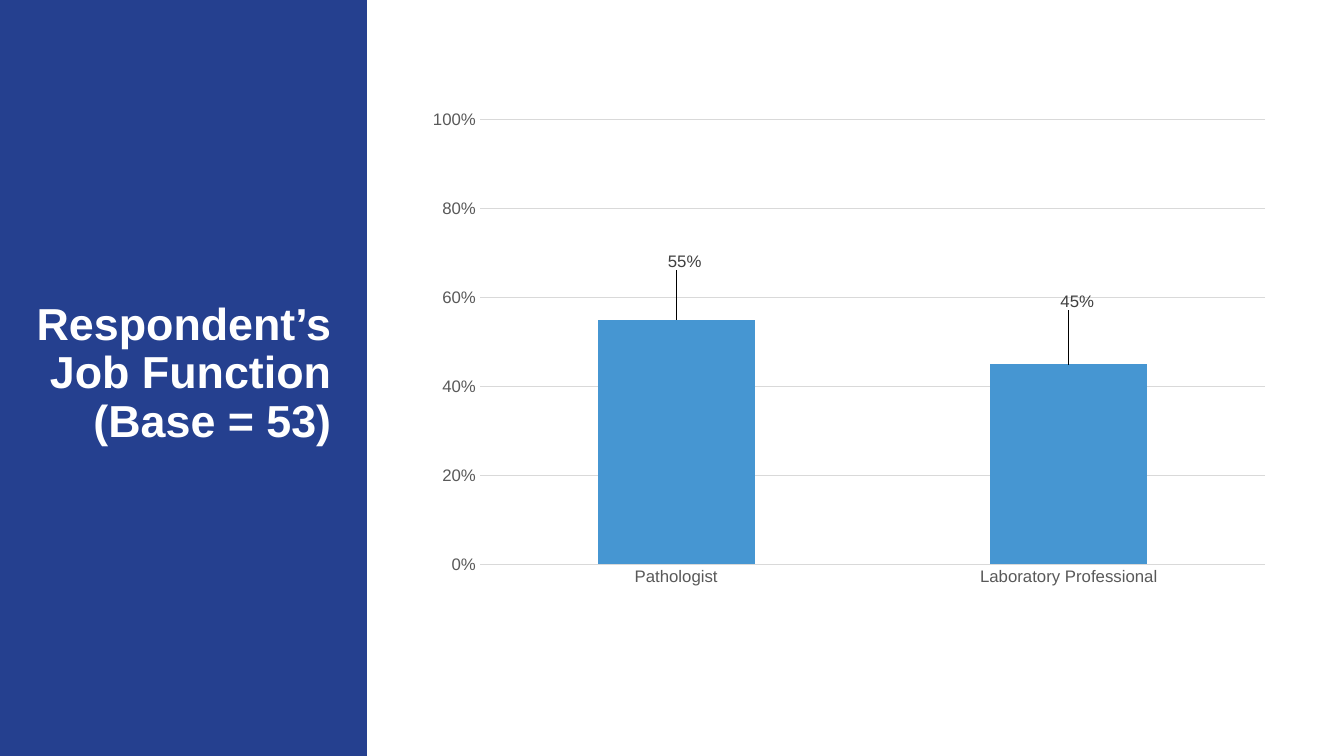
from lxml import etree
from pptx import Presentation
from pptx.chart.data import CategoryChartData
from pptx.dml.color import RGBColor
from pptx.enum.chart import XL_CHART_TYPE as ChartType, XL_LABEL_POSITION as LabelPos, XL_TICK_MARK as Tick
from pptx.enum.shapes import MSO_SHAPE as Shape
from pptx.enum.text import MSO_ANCHOR as Anchor, PP_ALIGN as Align
from pptx.oxml.ns import qn
from pptx.util import Pt

TITLE = ["Respondent’s Job Function", "(Base = 53)"]
JOBS = {"Pathologist": 0.55, "Laboratory Professional": 0.45}
LABEL_SHIFTS = [(0.01, -0.09), (0.01, -0.1)]
PLOT_AREA = {"x": 0.08, "y": 0.01, "w": 0.92, "h": 0.89}
COLORS = {"panel": "25408F", "title": "FFFFFF", "bar": "4696D2",
          "axis": "595959", "label": "404040", "grid": "D9D9D9"}
FONT = "Arial"
SLIDE_W, SLIDE_H = 960, 540
PANEL_W = 262


def rgb(name):
    return RGBColor.from_string(COLORS[name])


def style_font(font, size, color, bold=False):
    font.name, font.size, font.bold = FONT, Pt(size), bold
    font.color.rgb = rgb(color)


def manual_layout(sizes, inner=False):
    layout = etree.Element(qn("c:layout"))
    manual = etree.SubElement(layout, qn("c:manualLayout"))
    settings = {}
    if inner:
        settings = {"layoutTarget": "inner", "xMode": "edge", "yMode": "edge"}
    for tag, val in {**settings, **sizes}.items():
        etree.SubElement(manual, qn("c:" + tag)).set("val", str(val))
    return layout


def add_panel(slide):
    sp = slide.shapes.add_shape(Shape.RECTANGLE, 0, 0, Pt(PANEL_W), Pt(SLIDE_H))
    sp.shadow.inherit = False
    sp.fill.solid()
    sp.fill.fore_color.rgb = rgb("panel")
    sp.line.fill.background()
    slide.shapes._spTree.insert(2, sp._element)


def add_title(slide):
    sp = slide.shapes.title
    sp.left, sp.top, sp.width, sp.height = Pt(18), Pt(215.5), Pt(226), Pt(104)
    tf = sp.text_frame
    tf.text = "\n".join(TITLE)
    tf.word_wrap = True
    tf.vertical_anchor = Anchor.MIDDLE
    for p in tf.paragraphs:
        p.alignment, p.line_spacing = Align.RIGHT, 0.9
        for r in p.runs:
            style_font(r.font, 32, "title", True)


def style_axis(axis):
    axis.major_tick_mark = axis.minor_tick_mark = Tick.NONE
    axis.format.line.fill.background()
    style_font(axis.tick_labels.font, 12, "axis")


def add_job_chart(slide):
    data = CategoryChartData(number_format="0%")
    data.categories = list(JOBS)
    data.add_series("Series 1", list(JOBS.values()))
    chart = slide.shapes.add_chart(ChartType.COLUMN_CLUSTERED, Pt(294), Pt(79),
                                   Pt(610), Pt(360), data).chart
    chart.has_legend = chart.has_title = False
    chart.font.name, chart.font.size = FONT, Pt(10)

    style_axis(chart.category_axis)
    axis = chart.value_axis
    style_axis(axis)
    axis.minimum_scale, axis.maximum_scale, axis.major_unit = 0, 1, 0.2
    axis.tick_labels.number_format = "0%"
    axis.tick_labels.number_format_is_linked = False
    grid = axis.major_gridlines.format.line
    grid.color.rgb, grid.width = rgb("grid"), Pt(0.75)

    plot = chart.plots[0]
    plot.gap_width, plot.vary_by_categories = 150, False
    series = plot.series[0]
    series.format.fill.solid()
    series.format.fill.fore_color.rgb = rgb("bar")
    labels = series.data_labels
    labels.show_value = True
    labels.number_format, labels.number_format_is_linked = "0%", False
    style_font(labels.font, 12, "label")
    for i in range(len(JOBS)):
        label = series.points[i].data_label
        style_font(label.font, 12, "label")
        label.position = LabelPos.OUTSIDE_END
    for el, (x, y) in zip(series._element.iter(qn("c:dLbl")), LABEL_SHIFTS):
        el.insert(1, manual_layout({"x": x, "y": y}))

    area = chart._chartSpace.find(".//" + qn("c:plotArea"))
    for old in area.findall(qn("c:layout")):
        area.remove(old)
    area.insert(0, manual_layout(PLOT_AREA, inner=True))


def main():
    prs = Presentation()
    prs.slide_width, prs.slide_height = Pt(SLIDE_W), Pt(SLIDE_H)
    s = prs.slides.add_slide(prs.slide_layouts[5])
    add_panel(s)
    add_title(s)
    add_job_chart(s)
    prs.save("out.pptx")


if __name__ == "__main__":
    main()
